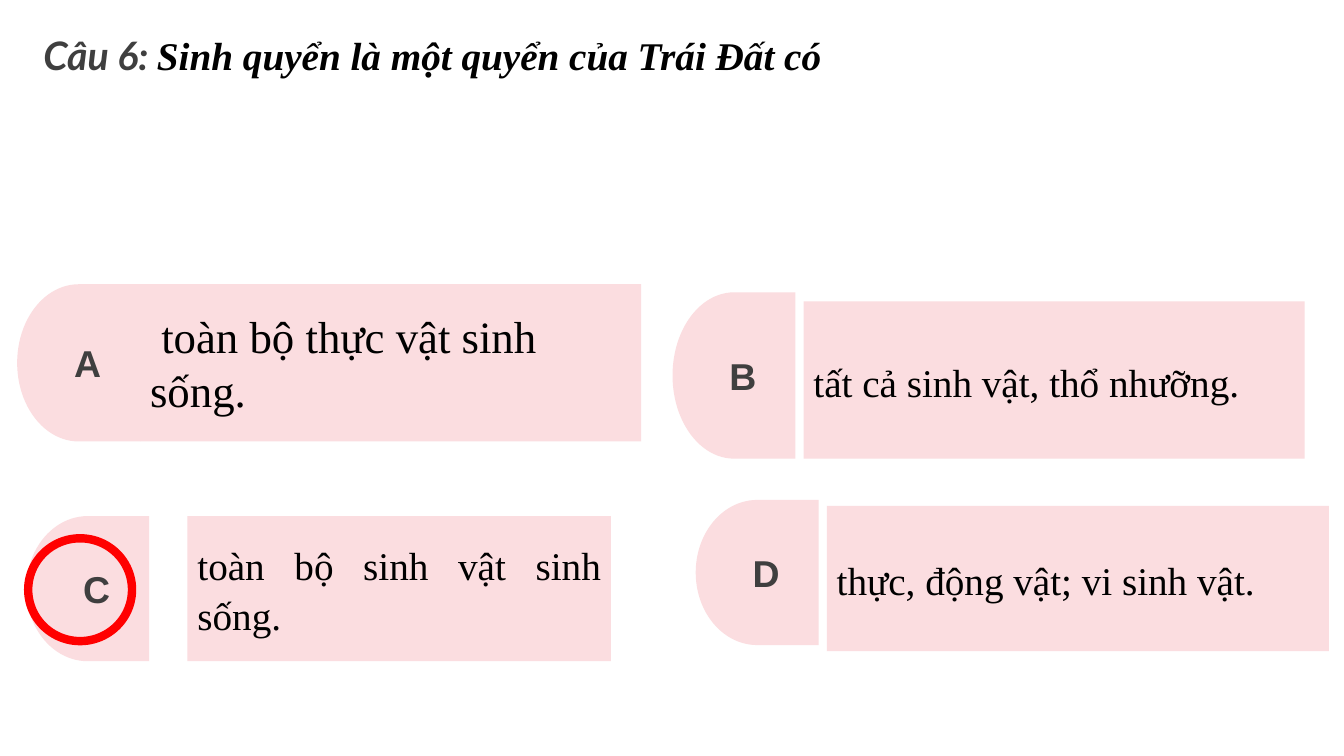
from pptx import Presentation
from pptx.dml.color import RGBColor
from pptx.enum.shapes import MSO_SHAPE as Shape
from pptx.enum.text import MSO_ANCHOR as Anchor, PP_ALIGN as Align
from pptx.util import Inches, Pt

# Content
COLORS = {"pink": "FBDDE0", "gray": "3F3F3F", "black": "000000", "red": "FF0000"}
SERIF = "Times New Roman"
QUESTION_LABEL = "Câu 6: "
QUESTION = "Sinh quyển là một quyển của Trái Đất có"
TAB_WIDTH = 1.22
JUSTIFIED = {"size": 28, "align": Align.JUSTIFY, "spacing": 1.06}
# letter, tab (left, top), tab height, answer box (left, top, width, height), text, format
ANSWERS = [
    ("A", (0.17, 2.82), 1.56, (1.39, 2.82, 4.97, 1.56),
     " toàn bộ thực vật sinh sống.", {"size": 32, "align": Align.LEFT}),
    ("B", (6.67, 2.9), 1.65, (7.97, 2.99, 4.97, 1.56),
     "tất cả sinh vật, thổ nhưỡng.", JUSTIFIED),
    ("C", (0.26, 5.12), 1.44, (1.86, 5.12, 4.2, 1.44),
     "toàn bộ sinh vật sinh sống.", JUSTIFIED),
    ("D", (6.9, 4.96), 1.44, (8.2, 5.02, 4.98, 1.44),
     "thực, động vật; vi sinh vật.", JUSTIFIED),
]
CORRECT_RING = (0.28, 5.34, 1.03, 1.02)


def color(name):
    return RGBColor.from_string(COLORS[name])


def add_text(paragraph, text, size=28, font=SERIF, ink="black", bold=False,
             italic=False, align=Align.LEFT, spacing=None):
    paragraph.alignment = align
    if spacing:
        paragraph.line_spacing = spacing
    run = paragraph.add_run()
    run.text = text
    run.font.size = Pt(size)
    run.font.name = font
    run.font.bold = bold
    run.font.italic = italic
    run.font.color.rgb = color(ink)


def add_panel(slide, kind, box, text, **text_format):
    shape = slide.shapes.add_shape(kind, *map(Inches, box))
    shape.shadow.inherit = False
    shape.fill.solid()
    shape.fill.fore_color.rgb = color("pink")
    shape.line.fill.background()
    frame = shape.text_frame
    frame.word_wrap = True
    frame.vertical_anchor = Anchor.MIDDLE
    add_text(frame.paragraphs[0], text, **text_format)
    return shape


def main():
    presentation = Presentation()
    presentation.slide_width = Inches(13.33)
    presentation.slide_height = Inches(7.5)
    slide = presentation.slides.add_slide(presentation.slide_layouts[6])

    # Question
    question = slide.shapes.add_textbox(*map(Inches, (0.43, 0.31, 12.4, 1.19)))
    frame = question.text_frame
    frame.word_wrap = True
    frame.margin_left = frame.margin_right = frame.margin_top = frame.margin_bottom = 0
    for text, font, ink in ((QUESTION_LABEL, "Lato", "gray"), (QUESTION, SERIF, "black")):
        add_text(frame.paragraphs[0], text, font=font, ink=ink, bold=True,
                 italic=True, align=Align.JUSTIFY)

    # Answers: a rounded letter tab facing left, and a text box
    for letter, corner, height, box, text, text_format in ANSWERS:
        tab = add_panel(slide, Shape.FLOWCHART_DELAY, (*corner, TAB_WIDTH, height), letter,
                        size=26.7, font="Arial", ink="gray", bold=True, align=Align.CENTER)
        tab._element.spPr.get_or_add_xfrm().set("flipH", "1")
        add_panel(slide, Shape.RECTANGLE, box, text, **text_format)

    # Ring around the correct answer
    ring = slide.shapes.add_shape(Shape.OVAL, *map(Inches, CORRECT_RING))
    ring.shadow.inherit = False
    ring.fill.background()
    ring.line.color.rgb = color("red")
    ring.line.width = Pt(6)

    presentation.save("out.pptx")


if __name__ == "__main__":
    main()
